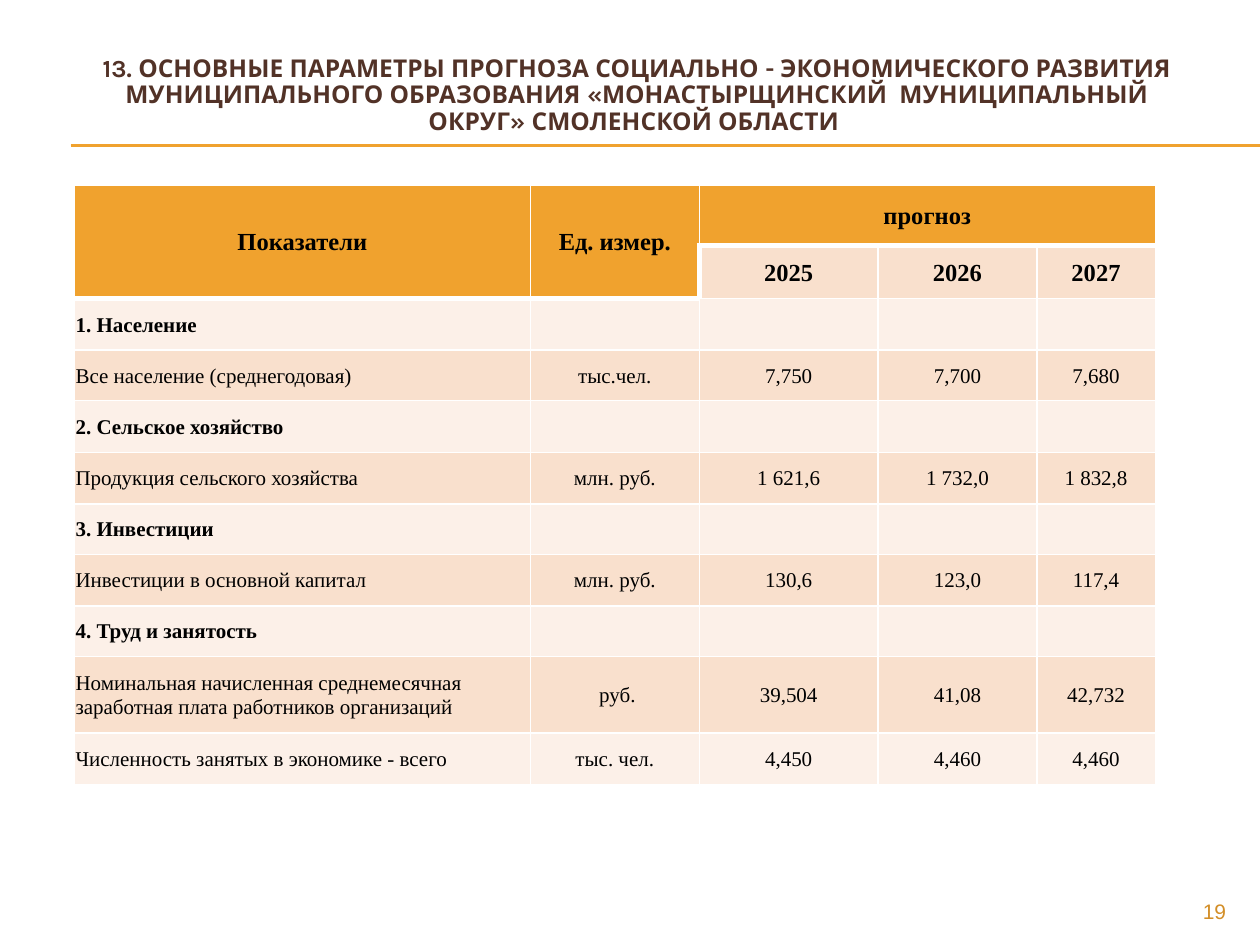
"""Build the slide with the socio-economic forecast table."""
from lxml import etree
from pptx import Presentation
from pptx.dml.color import RGBColor
from pptx.enum import shapes, text
from pptx.oxml import ns
from pptx.util import Inches, Pt

COLORS = {"accent": "F0A22E", "band": "F9E0CD", "light": "FCF0E8", "border": "FFFFFF",
          "title": "523227", "body": "000000", "number": "D38E27"}


def add_run(para, words, font, size, color, bold=False):
    span = para.add_run()
    span.text = words
    span.font.name, span.font.size, span.font.bold = font, Pt(size), bold
    span.font.color.rgb = RGBColor.from_string(COLORS[color])


def add_border(cell, side, points):
    line = etree.SubElement(cell._tc.get_or_add_tcPr(), ns.qn(f"a:ln{side}"), w=str(Pt(points)))
    fill = etree.SubElement(line, ns.qn("a:solidFill"))
    etree.SubElement(fill, ns.qn("a:srgbClr"), val=COLORS["border"])


deck = Presentation()
deck.slide_width, deck.slide_height = Inches(10), Inches(7.5)
page = deck.slides.add_slide(deck.slide_layouts[5])

title = page.shapes.title
title.left, title.top, title.width, title.height = (Inches(n) for n in (0.5, 0.35, 9.11, 0.82))
title.text_frame.vertical_anchor = text.MSO_ANCHOR.MIDDLE
title.text_frame.auto_size = text.MSO_AUTO_SIZE.NONE
para = title.text_frame.paragraphs[0]
para.alignment = text.PP_ALIGN.CENTER
para.line_spacing = 0.9
add_run(para, "13. ОСНОВНЫЕ ПАРАМЕТРЫ ПРОГНОЗА СОЦИАЛЬНО - ЭКОНОМИЧЕСКОГО РАЗВИТИЯ",
        "Karla", 14, "title", True)
para.add_line_break()
add_run(para, "МУНИЦИПАЛЬНОГО ОБРАЗОВАНИЯ «МОНАСТЫРЩИНСКИЙ  МУНИЦИПАЛЬНЫЙ ОКРУГ» СМОЛЕНСКОЙ ОБЛАСТИ ",
        "Karla", 14, "title", True)

for y in (1.15, 1.16):
    rule = page.shapes.add_connector(shapes.MSO_CONNECTOR.STRAIGHT,
                                     Inches(0.56), Inches(y), Inches(10), Inches(y))
    rule.line.color.rgb = RGBColor.from_string(COLORS["accent"])
    rule.line.width = Pt(0.75)
    etree.SubElement(rule._element.spPr, ns.qn("a:effectLst"))

rows = [
    ("Показатели", "Ед. измер.", "прогноз", "", ""),
    ("", "", "2025", "2026", "2027"),
    ("1. Население", "", "", "", ""),
    ("Все население (среднегодовая)", "тыс.чел.", "7,750", "7,700", "7,680"),
    ("2. Сельское хозяйство", "", "", "", ""),
    ("Продукция сельского хозяйства", "млн. руб.", "1 621,6", "1 732,0", "1 832,8"),
    ("3. Инвестиции", "", "", "", ""),
    ("Инвестиции в основной капитал", "млн. руб.", "130,6", "123,0", "117,4"),
    ("4. Труд и занятость", "", "", "", ""),
    ("Номинальная начисленная среднемесячная заработная плата работников организаций",
     " руб.", "39,504", "41,08", "42,732"),
    ("Численность занятых в экономике - всего", "тыс. чел.", "4,450", "4,460", "4,460"),
]
widths = [3.62, 1.34, 1.42, 1.26, 0.94]
heights = [0.48, 0.42, 0.41, 0.4, 0.41, 0.41, 0.4, 0.41, 0.4, 0.61, 0.41]
table = page.shapes.add_table(len(rows), len(widths), Inches(0.59), Inches(1.47),
                              Inches(sum(widths)), Inches(sum(heights))).table
for column, width in zip(table.columns, widths):
    column.width = Inches(width)
for row, height in zip(table.rows, heights):
    row.height = Inches(height)
table.cell(0, 0).merge(table.cell(1, 0))
table.cell(0, 1).merge(table.cell(1, 1))
table.cell(0, 2).merge(table.cell(0, 4))

for r, values in enumerate(rows):
    for c, value in enumerate(values):
        cell = table.cell(r, c)
        is_header = r == 0 or (r == 1 and c < 2)
        below_header = r == (2 if c < 2 else 1)
        add_border(cell, "L", 3 if (r, c) == (1, 2) else 1)
        add_border(cell, "R", 1)
        add_border(cell, "T", 3 if below_header else 1)
        add_border(cell, "B", 3 if is_header else 1)
        fill = "accent" if is_header else "band" if r % 2 else "light"
        cell.fill.solid()
        cell.fill.fore_color.rgb = RGBColor.from_string(COLORS[fill])
        cell.vertical_anchor = text.MSO_ANCHOR.MIDDLE
        cell.margin_left = cell.margin_right = cell.margin_top = Inches(0.01)
        cell.margin_bottom = 0
        if value:
            para = cell.text_frame.paragraphs[0]
            centred = r < 2 or c > 0
            para.alignment = text.PP_ALIGN.CENTER if centred else text.PP_ALIGN.LEFT
            is_section = not any(values[1:])
            add_run(para, value, "Times New Roman", 14 if r < 2 else 12, "body",
                    r < 2 or is_section)

number = page.shapes.add_textbox(Inches(9), Inches(7.08), Inches(0.83), Inches(0.27))
number.text_frame.word_wrap = True
para = number.text_frame.paragraphs[0]
para.alignment = text.PP_ALIGN.RIGHT
add_run(para, "19", "Arial", 12, "number")

deck.save("out.pptx")
